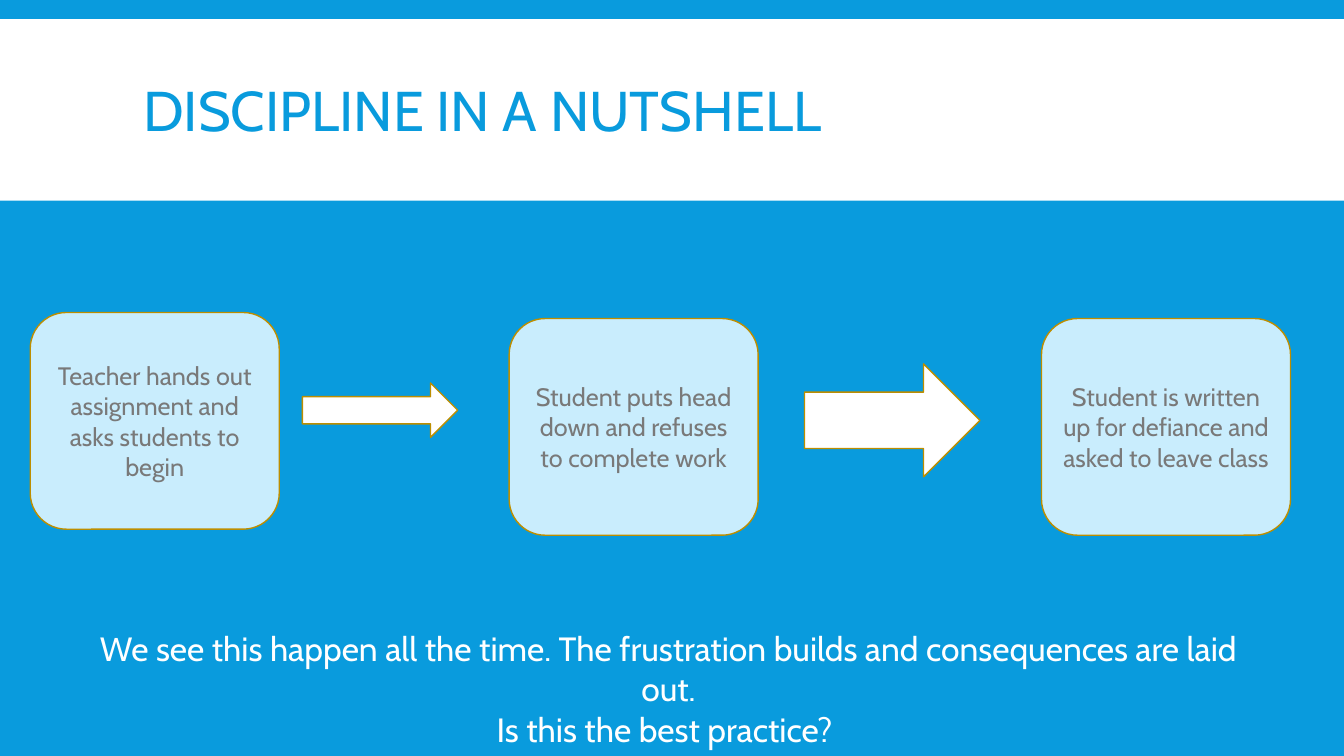
from dataclasses import dataclass

from pptx import Presentation
from pptx.dml.color import RGBColor
from pptx.enum import shapes, text
from pptx.util import Inches, Pt

BLUE = RGBColor(0x09, 0x9B, 0xDD)
WHITE = RGBColor(0xFF, 0xFF, 0xFF)
PALE_BLUE = RGBColor(0xC9, 0xED, 0xFD)
GOLD = RGBColor(0xBD, 0x8E, 0x00)
GREY = RGBColor(0x79, 0x79, 0x79)

FONT = "Cabin"
STEP_WIDTH, STEP_HEIGHT = 2.47, 2.15


@dataclass(frozen=True)
class Step:
    left: float
    top: float
    wording: str


@dataclass(frozen=True)
class Arrow:
    left: float
    top: float
    width: float
    height: float


STEPS = [
    Step(0.3, 3.1, "Teacher hands out assignment and asks students to begin"),
    Step(5.05, 3.16, "Student puts head down and refuses to complete work"),
    Step(10.33, 3.16, "Student is written up for defiance and asked to leave class"),
]
ARROWS = [Arrow(3, 3.8, 1.54, 0.54), Arrow(7.98, 3.61, 1.74, 1.12)]
CLOSING = [
    "We see this happen all the time. The frustration builds and consequences are laid out.",
    "Is this the best practice? ",
]


def set_attributes(target, values: dict) -> None:
    for name, value in values.items():
        setattr(target, name, value)


def write(frame, lines: list[str], size: float, color: RGBColor, align,
          anchor, spacing: float = 1.0) -> None:
    set_attributes(frame, {"word_wrap": True, "vertical_anchor": anchor,
                           "auto_size": text.MSO_AUTO_SIZE.NONE})
    frame.text = "\n".join(lines)
    for paragraph in frame.paragraphs:
        set_attributes(paragraph, {"alignment": align, "line_spacing": spacing})
        for run in paragraph.runs:
            set_attributes(run.font, {"name": FONT, "size": Pt(size), "bold": False})
            run.font.color.rgb = color


def add_block(slide, kind, box: tuple, fill: RGBColor, outline: RGBColor | None = None):
    block = slide.shapes.add_shape(kind, *map(Inches, box))
    block.shadow.inherit = False
    block.fill.solid()
    block.fill.fore_color.rgb = fill
    if outline is None:
        block.line.fill.background()
    else:
        block.line.color.rgb = outline
        block.line.width = Pt(1)
    return block


def add_title(slide) -> None:
    band = add_block(slide, shapes.MSO_SHAPE.RECTANGLE, (0, 0.19, 13.33, 1.8), WHITE)
    title = slide.shapes.title
    band._element.addnext(title._element)
    set_attributes(title, {"left": Inches(1.32), "top": Inches(0.31),
                           "width": Inches(10.7), "height": Inches(1.65)})
    write(title.text_frame, ["DISCIPLINE IN A NUTSHELL"], 40, BLUE,
          text.PP_ALIGN.LEFT, text.MSO_ANCHOR.MIDDLE, 0.85)


def add_step(slide, step: Step) -> None:
    box = (step.left, step.top, STEP_WIDTH, STEP_HEIGHT)
    block = add_block(slide, shapes.MSO_SHAPE.ROUNDED_RECTANGLE, box, PALE_BLUE, GOLD)
    write(block.text_frame, [step.wording], 18, GREY,
          text.PP_ALIGN.CENTER, text.MSO_ANCHOR.MIDDLE)


def add_arrow(slide, arrow: Arrow) -> None:
    box = (arrow.left, arrow.top, arrow.width, arrow.height)
    add_block(slide, shapes.MSO_SHAPE.RIGHT_ARROW, box, WHITE, GOLD)


def add_closing(slide) -> None:
    closing = slide.shapes.add_textbox(*map(Inches, (0.66, 6.18, 11.94, 0.91)))
    write(closing.text_frame, CLOSING, 24, WHITE,
          text.PP_ALIGN.CENTER, text.MSO_ANCHOR.TOP)


def main() -> None:
    deck = Presentation()
    set_attributes(deck, {"slide_width": Inches(13.33), "slide_height": Inches(7.5)})
    slide = deck.slides.add_slide(deck.slide_layouts.get_by_name("Title Only"))
    slide.background.fill.solid()
    slide.background.fill.fore_color.rgb = BLUE
    add_title(slide)
    for arrow in ARROWS:
        add_arrow(slide, arrow)
    for step in STEPS:
        add_step(slide, step)
    add_closing(slide)
    deck.save("out.pptx")


if __name__ == "__main__":
    main()
